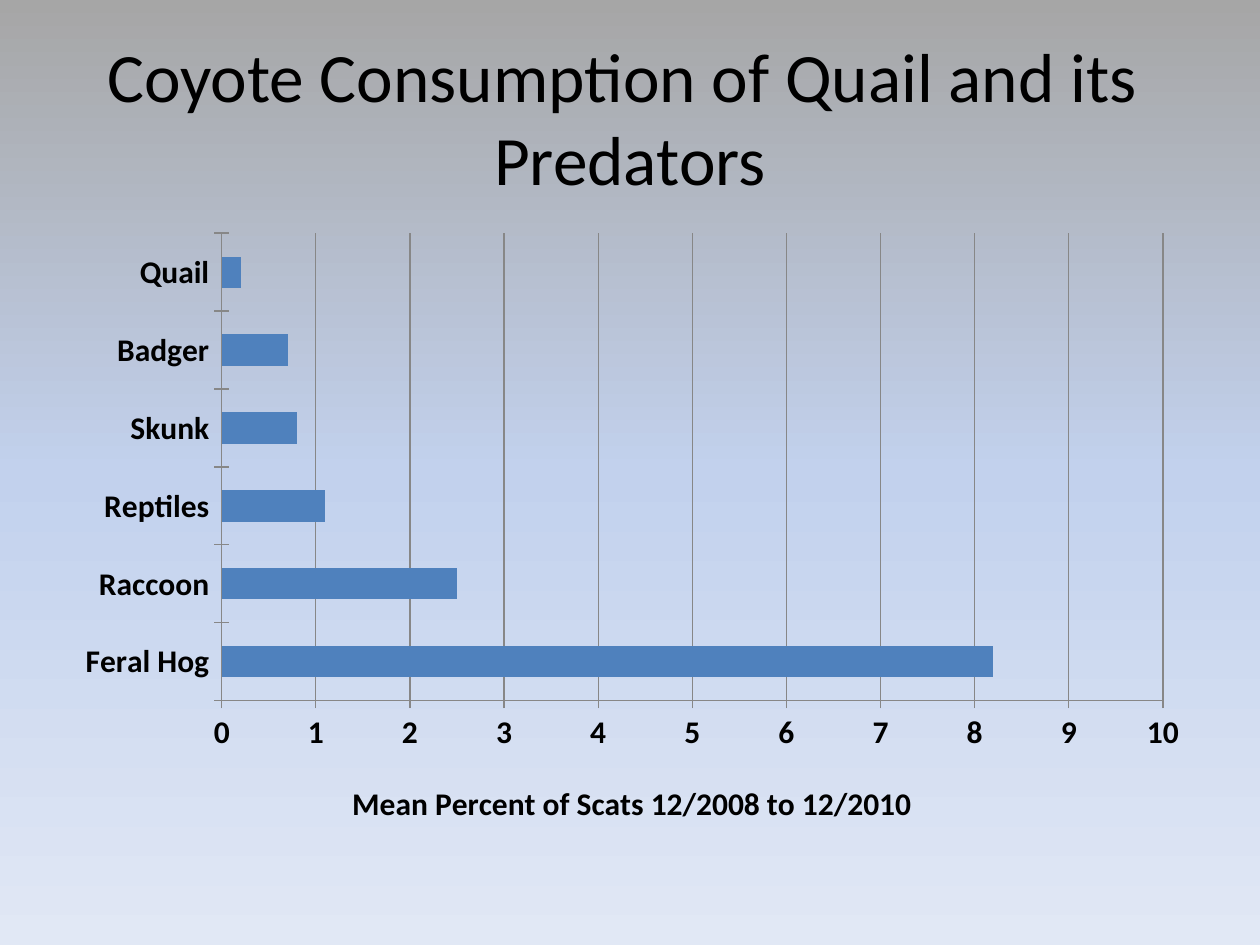
from copy import deepcopy

from lxml.etree import SubElement
from pptx import Presentation
from pptx.chart.data import CategoryChartData
from pptx.dml.color import RGBColor
from pptx.enum.chart import XL_CHART_TYPE, XL_TICK_MARK
from pptx.enum.text import MSO_ANCHOR, PP_ALIGN
from pptx.oxml.ns import qn
from pptx.util import Cm, Pt

COLORS = {
    "top": "A6A6A6",
    "middle": "C2D1ED",
    "bottom": "E1E8F5",
    "text": "000000",
    "bar": "4F81BD",
    "line": "878787",
}
FONT = "Calibri"
MEAN_PERCENTS = {
    "Feral Hog": 8.2,
    "Raccoon": 2.5,
    "Reptiles": 1.1,
    "Skunk": 0.8,
    "Badger": 0.7,
    "Quail": 0.2,
}


def color(name):
    return RGBColor.from_string(COLORS[name])


def style_font(font, size, bold=False):
    font.name = FONT
    font.size = Pt(size)
    font.bold = bold
    font.color.rgb = color("text")


def paint_background(page):
    fill = page.background.fill
    fill.gradient()
    fill.gradient_angle = 270
    first_stop = page._element.xpath(".//a:gs")[0]
    first_stop.addnext(deepcopy(first_stop))
    positions = (0, 0.5, 1)
    for stop, position, name in zip(fill.gradient_stops, positions, ("top", "middle", "bottom")):
        stop.position = position
        stop.color.rgb = color(name)


def add_title(page, text):
    box = page.shapes.add_textbox(Cm(1.27), Cm(0.76), Cm(22.86), Cm(3.18))
    frame = box.text_frame
    frame.word_wrap = True
    frame.vertical_anchor = MSO_ANCHOR.MIDDLE
    para = frame.paragraphs[0]
    para.text = text
    para.alignment = PP_ALIGN.CENTER
    style_font(para.font, 39.6)


def place(parent, index, **values):
    for layout in parent.findall(qn("c:layout")):
        parent.remove(layout)
    layout = parent.makeelement(qn("c:layout"))
    parent.insert(index, layout)
    manual = SubElement(layout, qn("c:manualLayout"))
    for tag, value in values.items():
        SubElement(manual, qn(f"c:{tag}")).set("val", str(value))


def style_axis(axis):
    axis.major_tick_mark = XL_TICK_MARK.CROSS
    axis.minor_tick_mark = XL_TICK_MARK.NONE
    axis.format.line.color.rgb = color("line")
    style_font(axis.tick_labels.font, 18, True)


def add_bar_chart(page, values, axis_title):
    data = CategoryChartData()
    data.categories = list(values)
    data.add_series("Series 1", list(values.values()))
    chart = page.shapes.add_chart(
        XL_CHART_TYPE.BAR_CLUSTERED, Cm(1.27), Cm(4.45), Cm(22.86), Cm(12.57), data
    ).chart
    chart.has_legend = False
    chart.has_title = False
    style_font(chart.font, 18, True)

    plot = chart.plots[0]
    plot.gap_width = 150
    plot.vary_by_categories = False
    bars = plot.series[0].format.fill
    bars.solid()
    bars.fore_color.rgb = color("bar")

    value_axis = chart.value_axis
    style_axis(chart.category_axis)
    style_axis(value_axis)
    value_axis.minimum_scale = 0
    value_axis.maximum_scale = 10
    value_axis.major_unit = 1
    value_axis.tick_labels.number_format = "0"
    value_axis.tick_labels.number_format_is_linked = False
    value_axis.has_major_gridlines = True
    value_axis.major_gridlines.format.line.color.rgb = color("line")

    title = value_axis.axis_title
    para = title.text_frame.paragraphs[0]
    para.text = axis_title
    style_font(para.font, 18, True)
    place(title._element, 1, xMode="edge", yMode="edge", x=0.25, y=0.89)
    place(chart._chartSpace.chart.plotArea, 0, layoutTarget="inner",
          xMode="edge", yMode="edge", x=0.14, y=0.02, w=0.83, h=0.75)


def main():
    deck = Presentation()
    deck.slide_width, deck.slide_height = Cm(25.4), Cm(19.05)
    page = deck.slides.add_slide(deck.slide_layouts[6])
    paint_background(page)
    add_title(page, "Coyote Consumption of Quail and its \nPredators")
    add_bar_chart(page, MEAN_PERCENTS, "Mean Percent of Scats 12/2008 to 12/2010")
    deck.save("out.pptx")


if __name__ == "__main__":
    main()
